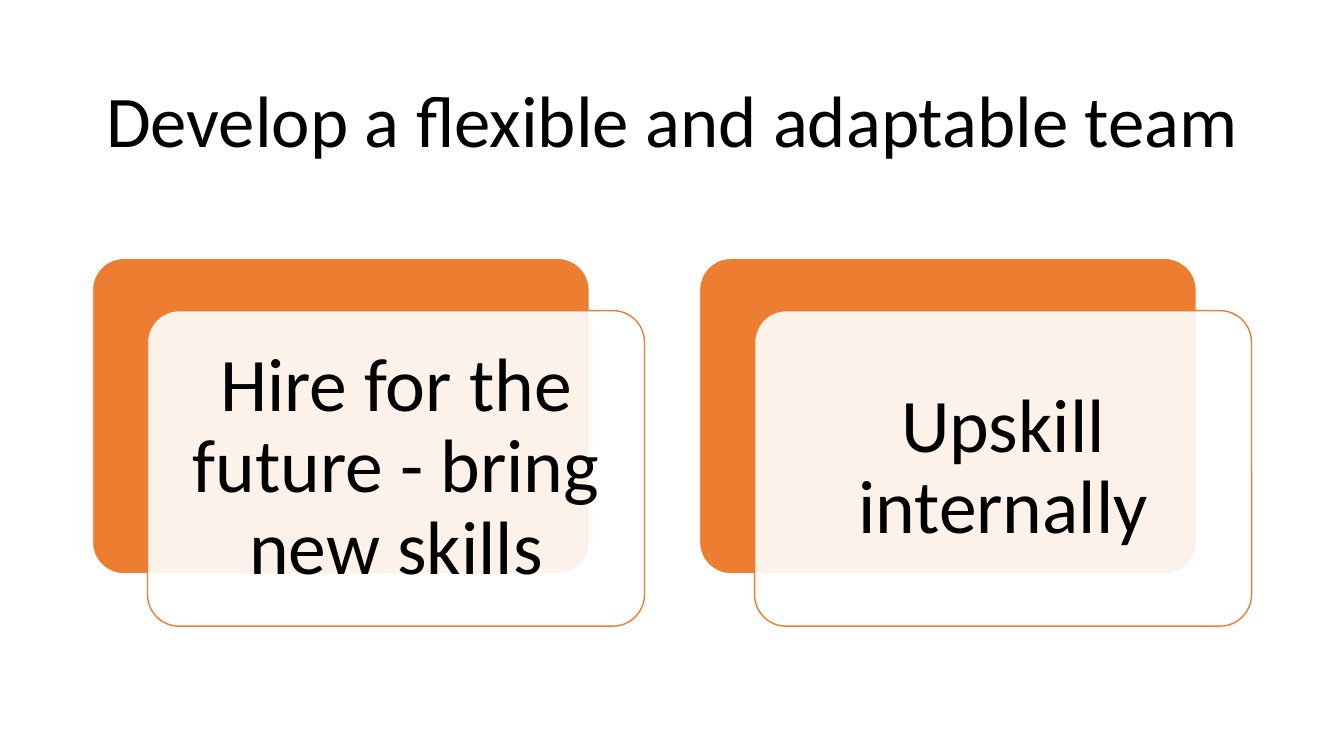
from lxml.etree import SubElement
from pptx import Presentation
from pptx.dml.color import RGBColor
from pptx.enum.shapes import MSO_SHAPE
from pptx.enum.text import MSO_ANCHOR, MSO_AUTO_SIZE, PP_ALIGN
from pptx.oxml.ns import qn
from pptx.util import Pt

TITLE = "Develop a flexible and adaptable team"
CARDS = ["Hire for the future - bring new skills", "Upskill internally"]
COLORS = {"accent": "ED7D31", "paper": "FFFFFF", "text": "000000"}

PAGE_WIDTH, PAGE_HEIGHT = 960, 540
MARGIN = 66
TITLE_TOP, TITLE_HEIGHT = 44, 89.5
CARD_TOP, CARD_WIDTH, CARD_HEIGHT = 184.5, 355, 225.4
OFFSET_X, OFFSET_Y = 39.4, 37.4
CARD_PADDING = 23
CARD_STEP = PAGE_WIDTH - 2 * MARGIN - CARD_WIDTH - OFFSET_X


def rgb(name):
    return RGBColor.from_string(COLORS[name])


def write_centered(shape, text, size, padding_x, padding_y):
    frame = shape.text_frame
    frame.word_wrap = True
    frame.auto_size = MSO_AUTO_SIZE.NONE
    frame.vertical_anchor = MSO_ANCHOR.MIDDLE
    frame.margin_left = frame.margin_right = Pt(padding_x)
    frame.margin_top = frame.margin_bottom = Pt(padding_y)
    para = frame.paragraphs[0]
    para.alignment = PP_ALIGN.CENTER
    para.line_spacing = 0.9
    span = para.add_run()
    span.text = text
    span.font.name = "Calibri"
    span.font.size = Pt(size)
    span.font.color.rgb = rgb("text")


def add_panel(page, left, top, fill, line):
    panel = page.shapes.add_shape(
        MSO_SHAPE.ROUNDED_RECTANGLE,
        Pt(left), Pt(top), Pt(CARD_WIDTH), Pt(CARD_HEIGHT))
    panel.adjustments[0] = 0.1
    panel.shadow.inherit = False
    panel.fill.solid()
    panel.fill.fore_color.rgb = rgb(fill)
    panel.line.color.rgb = rgb(line)
    panel.line.width = Pt(1)
    return panel


def set_opacity(shape, percent):
    color = shape.fill._xPr.find(qn("a:solidFill")).find(qn("a:srgbClr"))
    SubElement(color, qn("a:alpha")).set("val", str(percent * 1000))


def main():
    deck = Presentation()
    deck.slide_width, deck.slide_height = Pt(PAGE_WIDTH), Pt(PAGE_HEIGHT)
    page = deck.slides.add_slide(deck.slide_layouts[5])

    title = page.shapes.title
    title.left, title.top = Pt(MARGIN), Pt(TITLE_TOP)
    title.width, title.height = Pt(PAGE_WIDTH - 2 * MARGIN), Pt(TITLE_HEIGHT)
    write_centered(title, TITLE, 52, 7.2, 3.6)

    for index, text in enumerate(CARDS):
        left = MARGIN + index * CARD_STEP
        add_panel(page, left, CARD_TOP, "accent", "paper")
        front = add_panel(page, left + OFFSET_X, CARD_TOP + OFFSET_Y,
                          "paper", "accent")
        set_opacity(front, 90)
        write_centered(front, text, 54, CARD_PADDING, CARD_PADDING)

    deck.save("out.pptx")


if __name__ == "__main__":
    main()
